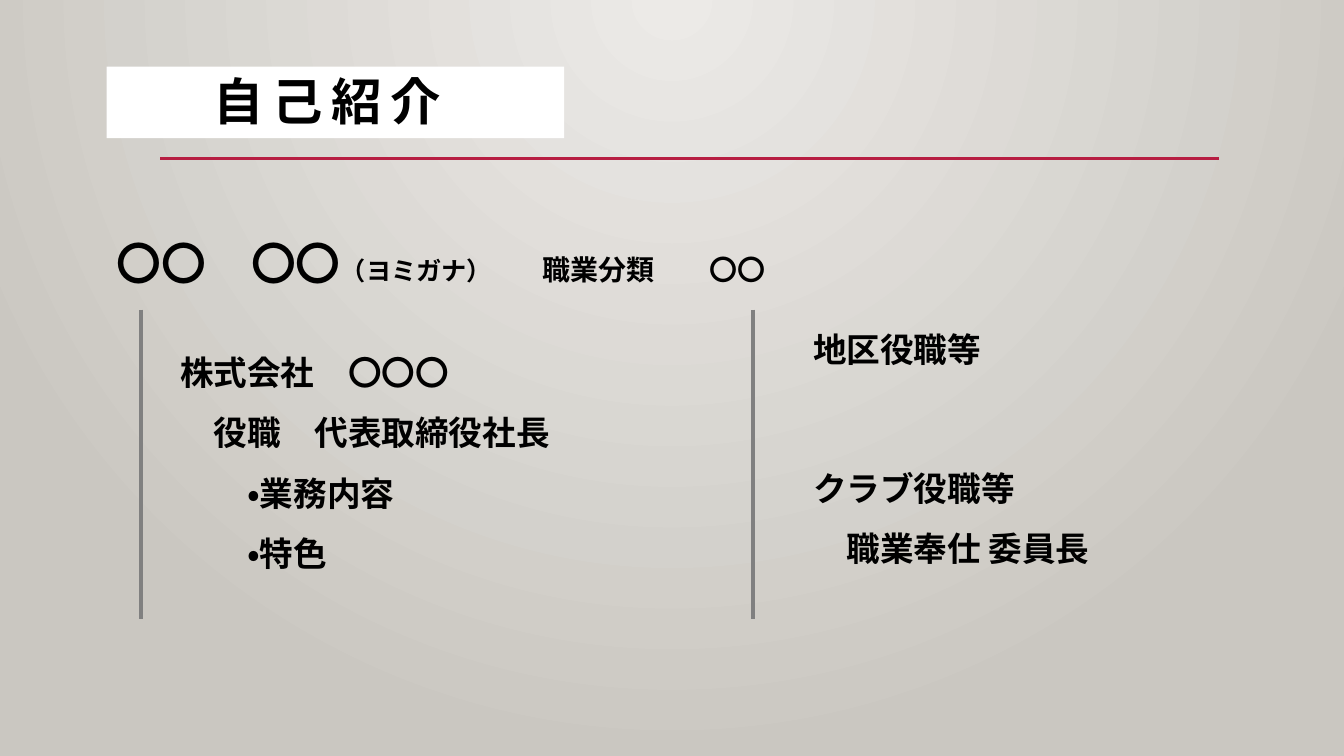
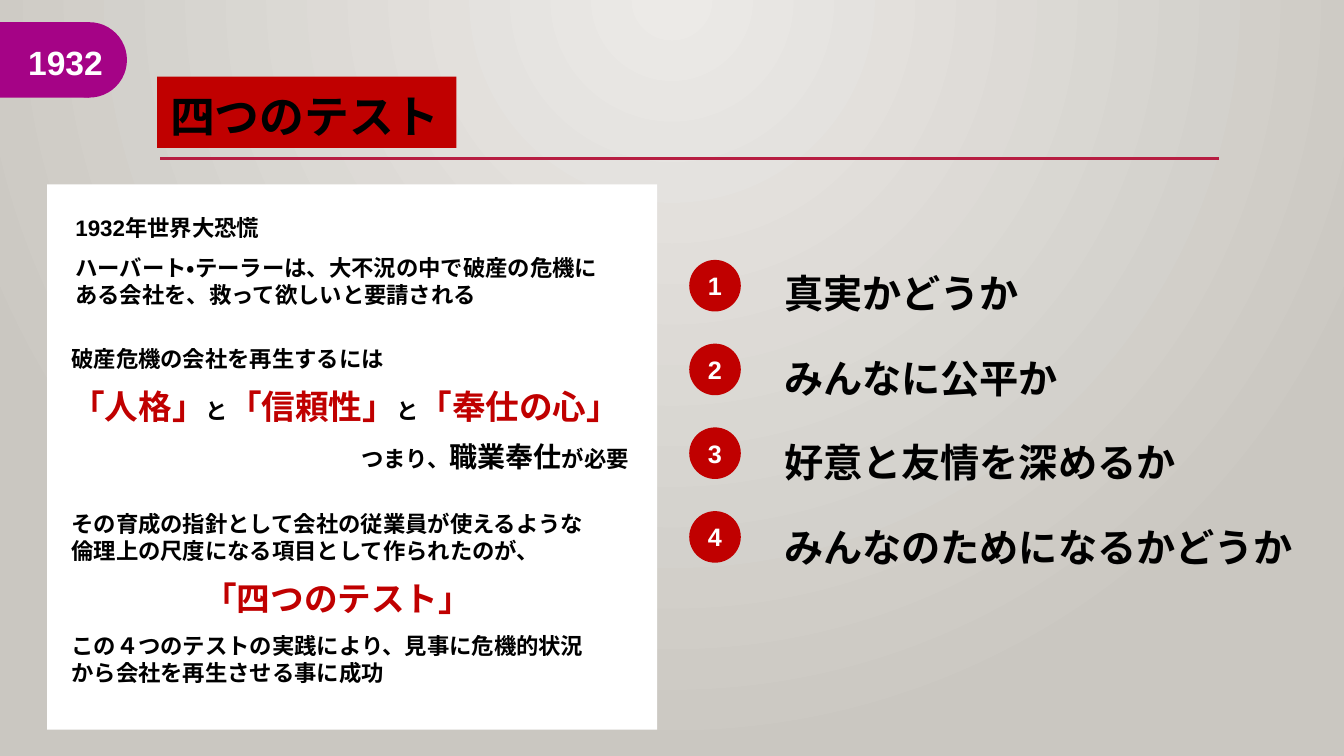
import pptx
import pptx.dml.color
import pptx.enum.dml
import pptx.enum.lang
import pptx.enum.shapes
import pptx.enum.text
import pptx.oxml
import pptx.oxml.ns
import pptx.util
from dataclasses import dataclass
from typing import NamedTuple

Cm = pptx.util.Cm
Pt = pptx.util.Pt
SHAPE = pptx.enum.shapes.MSO_SHAPE
ALIGN = pptx.enum.text.PP_ALIGN
ANCHOR = pptx.enum.text.MSO_ANCHOR
SIZE = pptx.enum.text.MSO_AUTO_SIZE

BLACK, WHITE, RED = "000000", "FFFFFF", "C00000"
RULE, GREY, PURPLE = "B71E42", "808080", "A50386"
LIGHT, DARK = "ECEAE7", "CAC7C1"
FONT = {
    "name": "Arial",
    "bold": True,
    "language_id": pptx.enum.lang.MSO_LANGUAGE_ID.JAPANESE,
}


class Box(NamedTuple):
    left: float
    top: float
    width: float
    height: float


class Run(NamedTuple):
    text: str
    size: float
    tone: str = BLACK
    face: str = "Arial"
    space: int = 0


@dataclass
class Para:
    runs: list[Run]
    align: ALIGN = ALIGN.LEFT
    line: float = 1.0
    gap: float = 0
    indent: float = 0
    tabs: tuple[float, ...] = ()


@dataclass
class Block:
    box: Box
    paras: list[Para]
    wrap: bool = True
    anchor: ANCHOR = ANCHOR.TOP


def tint(code: str) -> pptx.dml.color.RGBColor:
    return pptx.dml.color.RGBColor.from_string(code)


def cms(box: Box) -> list[pptx.util.Length]:
    return [Cm(value) for value in box]


def assign(item, values: dict) -> None:
    for key, value in values.items():
        setattr(item, key, value)


def paint(master) -> None:
    fill = master.background.fill
    fill.gradient()
    for stop, code, place in zip(fill.gradient_stops, (LIGHT, DARK), (0, 1)):
        stop.color.rgb = tint(code)
        stop.position = place
    line = master.element.xpath(".//p:bg//a:lin")[0]
    radial = pptx.oxml.parse_xml(
        f'<a:path {pptx.oxml.ns.nsdecls("a")} path="circle">'
        '<a:fillToRect l="43000" t="0" r="43000" b="100000"/></a:path>'
    )
    line.getparent().replace(line, radial)


def add_line(slide, start: tuple, end: tuple, code: str, width: float) -> None:
    kind = pptx.enum.shapes.MSO_CONNECTOR.STRAIGHT
    line = slide.shapes.add_connector(kind, *map(Cm, start + end))
    line.line.color.rgb = tint(code)
    line.line.width = Pt(width)
    props = line.element.spPr
    props.append(props.makeelement(pptx.oxml.ns.qn("a:effectLst"), {}))


def add_form(slide, kind: SHAPE, box: Box, code: str):
    form = slide.shapes.add_shape(kind, *cms(box))
    form.shadow.inherit = False
    form.fill.solid()
    form.fill.fore_color.rgb = tint(code)
    form.line.fill.background()
    return form


def add_tabs(para, stops: tuple[float, ...]) -> None:
    marks = "".join(f'<a:tab pos="{Cm(stop)}" algn="l"/>' for stop in stops)
    para._p.get_or_add_pPr().append(
        pptx.oxml.parse_xml(f'<a:tabLst {pptx.oxml.ns.nsdecls("a")}>{marks}</a:tabLst>')
    )


def write(frame, paras: list[Para]) -> None:
    for index, data in enumerate(paras):
        para = frame.add_paragraph() if index else frame.paragraphs[0]
        if data.tabs:
            add_tabs(para, data.tabs)
        assign(para, {
            "alignment": data.align,
            "line_spacing": data.line,
            "space_before": Pt(data.gap if index else 0),
        })
        if data.indent:
            para._p.get_or_add_pPr().set("marL", str(Pt(data.indent)))
        for part in data.runs:
            run = para.add_run()
            run.text = part.text
            assign(run.font, FONT | {"name": part.face, "size": Pt(part.size)})
            run.font.color.rgb = tint(part.tone)
            if part.space:
                run.font._element.set("spc", str(part.space * 100))


def add_text(slide, block: Block) -> None:
    frame = slide.shapes.add_textbox(*cms(block.box)).text_frame
    assign(frame, {
        "word_wrap": block.wrap,
        "auto_size": SIZE.NONE,
        "vertical_anchor": block.anchor,
    })
    write(frame, block.paras)


def add_badge(slide, box: Box, label: str) -> None:
    frame = add_form(slide, SHAPE.OVAL, box, RED).text_frame
    assign(frame, {
        "margin_left": 0, "margin_right": 0, "margin_top": 0, "margin_bottom": 0,
        "word_wrap": False, "vertical_anchor": ANCHOR.MIDDLE,
    })
    write(frame, [Para([Run(label, 18, WHITE)], ALIGN.CENTER)])


def add_page(deck, panel: Box, code: str, title: Block):
    slide = deck.slides.add_slide(deck.slide_layouts[6])
    add_line(slide, (4.04, 3.99), (30.73, 3.99), RULE, 2.5)
    add_form(slide, SHAPE.RECTANGLE, panel, code)
    add_text(slide, title)
    return slide


def lines(rows: list[tuple[str, int]]) -> list[Para]:
    return [Para([Run(text, 24)], line=1.5, indent=24 * level) for text, level in rows]


def intro(deck) -> None:
    title = Block(
        Box(3.23, 1.78, 10.03, 1.7),
        [Para([Run("自己紹介", 36, space=6)], ALIGN.CENTER, 0.9)],
        anchor=ANCHOR.MIDDLE,
    )
    slide = add_page(deck, Box(2.69, 1.68, 11.53, 1.8), WHITE, title)
    name = Para(
        [Run("〇〇　〇〇", 32), Run("（ヨミガナ）\t", 18), Run("職業分類\t〇〇", 20)],
        line=1.5, tabs=(10.72, 14.93),
    )
    firm = lines([
        ("株式会社　〇〇〇", 0), ("役職　代表取締役社長", 1),
        ("・業務内容", 2), ("・特色", 2),
    ])
    club = lines([("クラブ役職等", 0), ("職業奉仕 委員長", 1)])
    for block in (
        Block(Box(2.69, 5.13, 19.81, 2.11), [name]),
        Block(Box(4.29, 8.23, 11.86, 6.27), firm),
        Block(Box(20.24, 7.65, 4.78, 3.18), lines([("地区役職等", 0)]), False),
        Block(Box(20.24, 11.15, 8.79, 3.18), club),
    ):
        add_text(slide, block)
    for left in (3.56, 18.97):
        add_line(slide, (left, 7.8), (left, 15.6), GREY, 3)


def test(deck) -> None:
    title = Block(
        Box(4.04, 2.24, 26.67, 1.5),
        [Para([Run("四つのテスト", 32)], line=0.9)],
        anchor=ANCHOR.MIDDLE,
    )
    slide = add_page(deck, Box(3.96, 1.93, 7.54, 1.8), RED, title)
    add_form(slide, SHAPE.RECTANGLE, Box(1.19, 4.65, 15.37, 13.74), WHITE)

    asks = ["真実かどうか", "みんなに公平か", "好意と友情を深めるか", "みんなのためになるかどうか"]
    body = [Para([Run(ask, 28)], line=1.5, gap=10) for ask in asks]
    for index in range(len(asks)):
        add_badge(slide, Box(17.37, 6.55 + 2.11 * index, 1.3, 1.3), str(index + 1))

    crisis = [
        Para([Run("1932年世界大恐慌", 16)]),
        Para([
            Run("ハーバート・テーラー", 16, face="Calibri"),
            Run("は、大不況の中で破産の危機にある会社を、救って欲しいと要請される", 16),
        ], gap=10),
    ]
    needs = [
        Para([Run("破産危機の会社を再生するには", 16)]),
        Para([
            Run("「人格」", 24, RED), Run("と", 16), Run("「信頼性」", 24, RED),
            Run("と", 16), Run("「奉仕の心」", 24, RED),
        ], gap=10),
        Para(
            [Run("つまり、", 16), Run("職業奉仕", 20), Run("が必要", 16)],
            ALIGN.RIGHT, gap=10,
        ),
    ]
    guide = [
        Para([Run("その育成の指針として会社の従業員が使えるような倫理上の尺度になる項目として作られたのが、", 16)]),
        Para([Run("「四つのテスト」", 24, RED)], ALIGN.CENTER, gap=10),
        Para([Run("この４つのテストの実践により、見事に危機的状況から会社を再生させる事に成功", 16)], gap=10),
    ]
    add_form(slide, SHAPE.RECTANGLE, Box(0, 0.56, 2.24, 1.9), PURPLE)
    add_form(slide, SHAPE.OVAL, Box(1.3, 0.56, 1.9, 1.9), PURPLE)
    for block in (
        Block(Box(19.51, 6.07, 13.92, 8.51), body),
        Block(Box(1.55, 8.56, 14.55, 3.53), needs),
        Block(Box(1.65, 5.26, 13.92, 2.67), crisis),
        Block(Box(1.55, 12.73, 13.92, 4.72), guide),
        Block(Box(0.46, 0.94, 2.46, 1.27), [Para([Run("1932", 24, WHITE)])], False),
    ):
        add_text(slide, block)


def main() -> None:
    deck = pptx.Presentation()
    assign(deck, {"slide_width": Cm(33.87), "slide_height": Cm(19.05)})
    paint(deck.slide_master)
    intro(deck)
    test(deck)
    deck.save("out.pptx")


if __name__ == "__main__":
    main()
